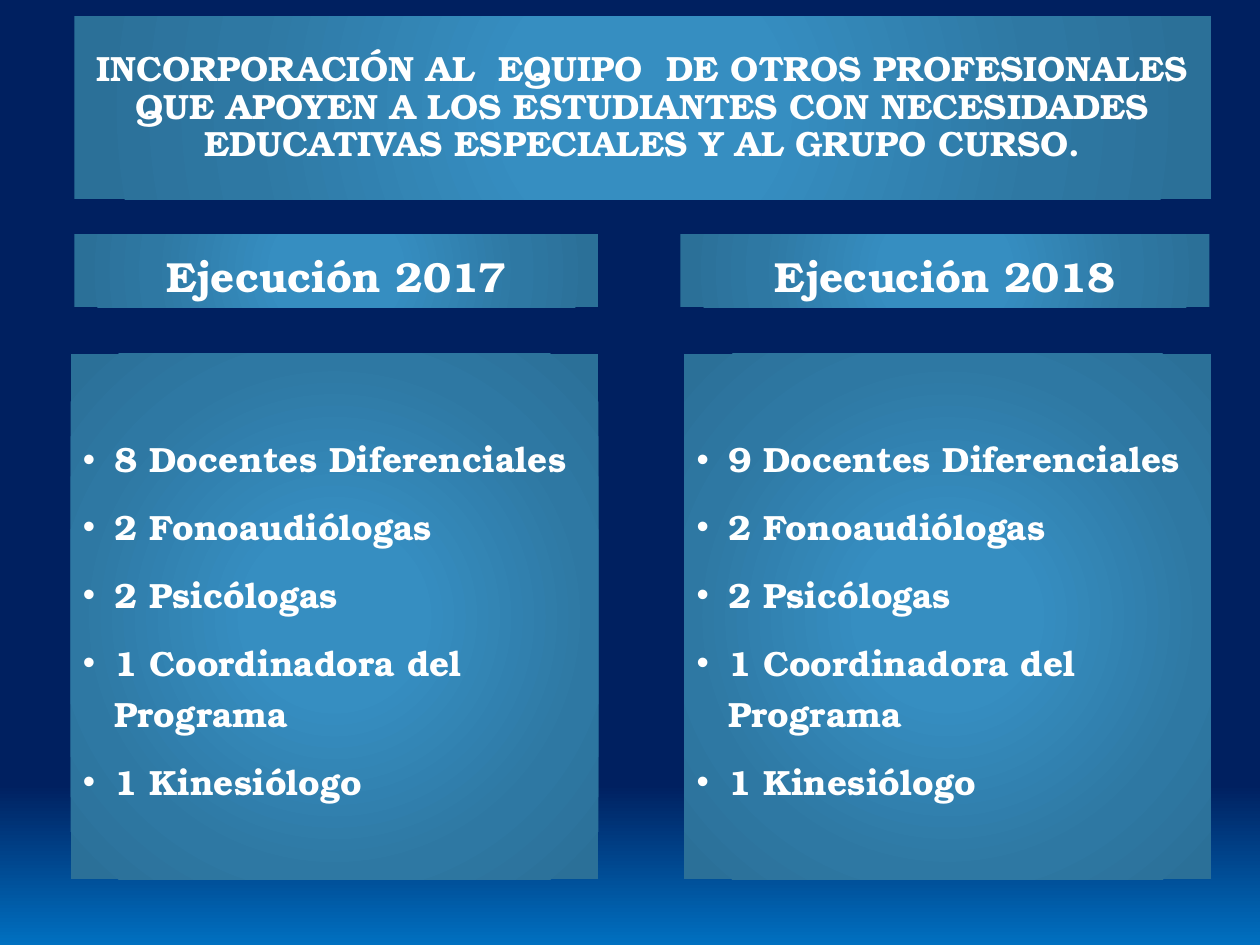
from lxml import etree
from pptx import Presentation
from pptx.dml.color import RGBColor
from pptx.enum.shapes import MSO_SHAPE
from pptx.enum.text import MSO_ANCHOR, PP_ALIGN
from pptx.oxml.ns import qn
from pptx.util import Inches, Pt

FONT = "TeX Gyre Bonum"
COLORS = {
    "text": "FFFFFF",
    "navy": "002060",
    "azure": "0070C0",
    "center": "368EC1",
    "middle": "2E78A3",
    "edge": "2B7098",
}
BACKGROUND_STOPS = [(0, "navy"), (74, "navy"), (83, "navy"), (100, "azure")]
PANEL_STOPS = [(0, "center"), (23, "center"), (69, "middle"), (97, "edge")]
TITLE = (
    "INCORPORACIÓN AL  EQUIPO  DE OTROS PROFESIONALES QUE APOYEN A LOS "
    "ESTUDIANTES CON NECESIDADES EDUCATIVAS ESPECIALES Y AL GRUPO CURSO."
)
SHARED_STAFF = ["2 Fonoaudiólogas", "2 Psicólogas", "1 Coordinadora del Programa", "1 Kinesiólogo"]
COLUMNS = [
    ("Ejecución 2017", "8 Docentes Diferenciales", (0.59, 4.16), (0.56, 4.19)),
    ("Ejecución 2018", "9 Docentes Diferenciales", (5.4, 4.2), (5.43, 4.18)),
]


def apply_gradient(fill, element, stops, radial):
    """Fill the element with a radial or a top-down gradient."""
    fill.gradient()
    gradient = next(element.iter(qn("a:gradFill")))
    for child in list(gradient):
        gradient.remove(child)
    stop_list = etree.SubElement(gradient, qn("a:gsLst"))
    for position, color in stops:
        stop = etree.SubElement(stop_list, qn("a:gs"), pos=str(position * 1000))
        etree.SubElement(stop, qn("a:srgbClr"), val=COLORS[color])
    if radial:
        circle = etree.SubElement(gradient, qn("a:path"), path="circle")
        sides = {side: "50000" for side in "ltrb"}
        etree.SubElement(circle, qn("a:fillToRect"), **sides)
    else:
        etree.SubElement(gradient, qn("a:lin"), ang="5400000", scaled="0")


def add_panel(slide, left, top, width, height, anchor):
    """Add a gradient rectangle and return its text frame."""
    shape = slide.shapes.add_shape(
        MSO_SHAPE.RECTANGLE, Inches(left), Inches(top), Inches(width), Inches(height)
    )
    shape.shadow.inherit = False
    shape.line.fill.background()
    apply_gradient(shape.fill, shape.element, PANEL_STOPS, radial=True)
    frame = shape.text_frame
    frame.word_wrap = True
    frame.vertical_anchor = anchor
    return frame


def write_paragraph(paragraph, text, size, alignment, line_spacing):
    """Write one bold run into the paragraph."""
    paragraph.alignment = alignment
    paragraph.line_spacing = line_spacing
    run = paragraph.add_run()
    run.text = text
    run.font.name = FONT
    run.font.size = Pt(size)
    run.font.bold = True
    run.font.color.rgb = RGBColor.from_string(COLORS["text"])


def add_heading(slide, box, text, size, anchor, line_spacing=1.0):
    """Add a panel with one centred heading."""
    frame = add_panel(slide, *box, anchor)
    write_paragraph(frame.paragraphs[0], text, size, PP_ALIGN.CENTER, line_spacing)


def add_bullet_list(slide, box, items):
    """Add a panel with a bulleted list."""
    frame = add_panel(slide, *box, MSO_ANCHOR.TOP)
    frame.margin_top = Inches(0.6)
    for index, item in enumerate(items):
        paragraph = frame.add_paragraph() if index else frame.paragraphs[0]
        write_paragraph(paragraph, item, 20, PP_ALIGN.LEFT, 1.2)
        paragraph.space_before = Pt(10 if index else 0)
        properties = paragraph._p.get_or_add_pPr()
        properties.set("marL", str(Inches(0.25)))
        properties.set("indent", str(-Inches(0.25)))
        etree.SubElement(properties, qn("a:buFont"), typeface="Arial")
        etree.SubElement(properties, qn("a:buChar"), char="•")


def main():
    """Build the slide and save it."""
    presentation = Presentation()
    presentation.slide_width = Inches(10)
    presentation.slide_height = Inches(7.5)
    slide = presentation.slides.add_slide(presentation.slide_layouts[6])
    apply_gradient(slide.background.fill, slide.element, BACKGROUND_STOPS, radial=False)
    add_heading(slide, (0.59, 0.13, 9.02, 1.45), TITLE, 20, MSO_ANCHOR.MIDDLE, 0.9)
    for heading, teachers, (head_left, head_width), (list_left, list_width) in COLUMNS:
        add_heading(slide, (head_left, 1.86, head_width, 0.58), heading, 24, MSO_ANCHOR.BOTTOM)
        add_bullet_list(slide, (list_left, 2.81, list_width, 4.17), [teachers, *SHARED_STAFF])
    presentation.save("out.pptx")


if __name__ == "__main__":
    main()
